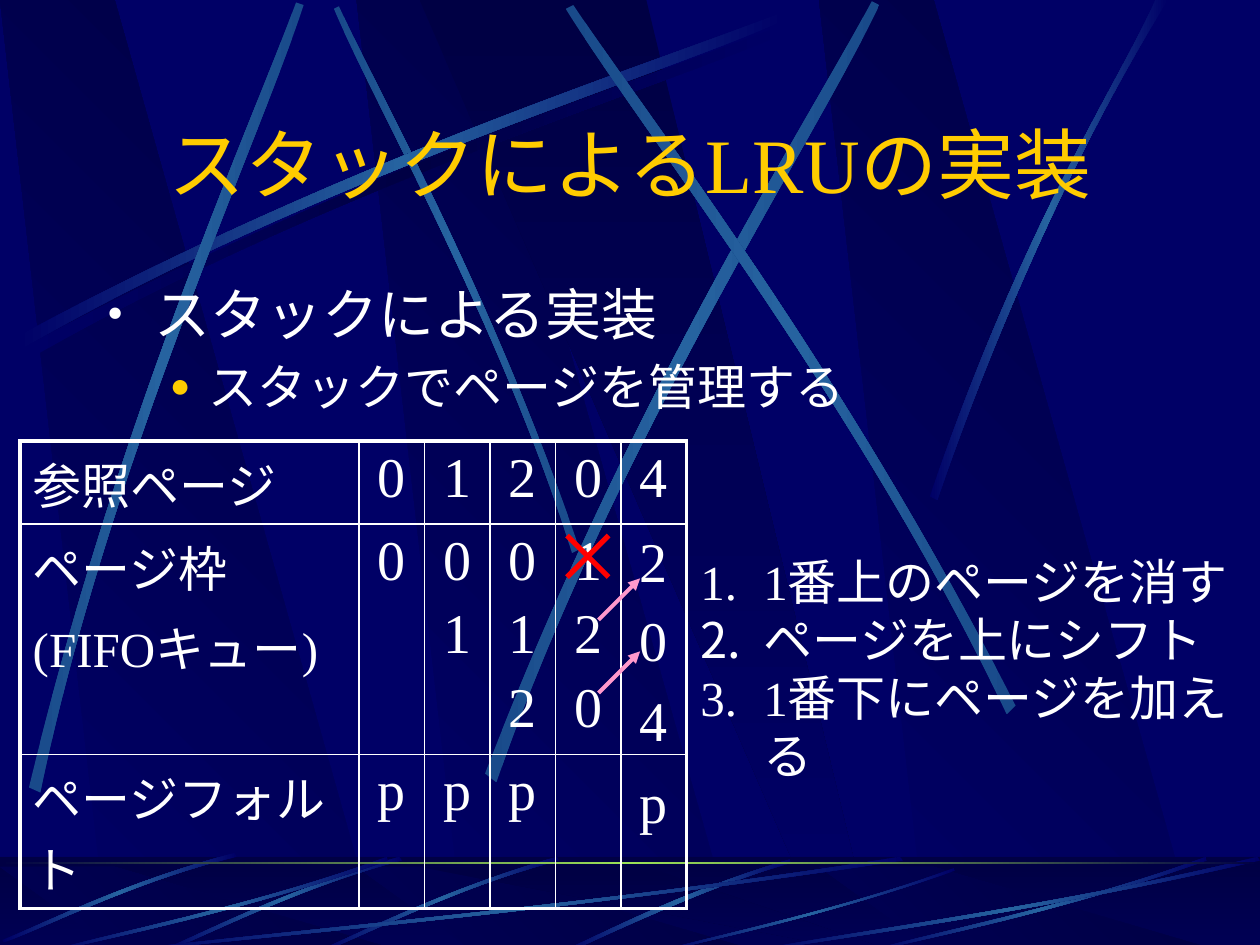
from dataclasses import dataclass
from pptx import Presentation, util as u
from pptx.dml.color import RGBColor
from pptx.enum import shapes, text
from pptx.oxml import parse_xml
from pptx.oxml.ns import nsdecls, qn
from lxml import etree

PX = 9144  # 100 px to the inch


@dataclass(frozen=True)
class Theme:
    face: str = "Times New Roman"
    back: str = "000066"
    deep: str = "000044"
    beam: str = "2663A0"
    dim: str = "194A8A"
    glow: str = "9CE157"
    gold: str = "FFCC00"
    ink: str = "FFFFFF"
    red: str = "FF0000"
    pink: str = "FF99CC"
    title: int = 44
    large: int = 32
    small: int = 28


T = Theme()
# Each beam: end tone, middle tone, one edge as a curve, the other edge as a curve back
WALL = [
    (T.back, T.deep, (20, 275, 284, 134, 524, 59, 626, 18), (629, 24, 528, 69, 254, 151, 23, 285)),
    (T.dim, T.beam, (460, 436, 391, 234, 302, 77, 269, 5), (265, 7, 295, 79, 398, 258, 454, 439)),
    (T.back, T.beam, (14, 267, 278, 125, 518, 51, 620, 10), (623, 16, 522, 61, 248, 143, 17, 277)),
    (T.dim, T.beam, (23, 625, 93, 334, 197, 105, 235, 2), (241, 4, 207, 109, 86, 368, 32, 629)),
    (T.dim, T.beam, (385, 614, 498, 320, 638, 102, 692, 1), (698, 4, 649, 108, 486, 355, 394, 621)),
    (T.dim, T.beam, (806, 560, 670, 293, 516, 95, 455, 4), (449, 7, 507, 101, 685, 325, 799, 567)),
    (T.back, T.beam, (738, 394, 814, 173, 888, 66, 917, 0), (927, 0, 836, 145, 769, 322, 744, 397)),
]
FLOOR = [(T.back, T.beam, go, back) for go, back in (
    ((627, 2, 537, 29, 477, 62, 448, 74), (453, 75, 490, 58, 571, 20, 628, 5)),
    ((442, 0, 355, 25, 287, 60, 256, 73), (257, 75, 288, 63, 365, 23, 444, 3)),
    ((317, 0, 230, 25, 162, 60, 131, 73), (132, 75, 163, 63, 240, 23, 319, 3)),
    ((186, -3, 99, 20, 33, 54, 2, 66), (3, 68, 34, 57, 110, 18, 188, 0)),
    ((717, 3, 449, 43, 206, 64, 103, 75), (100, 74, 202, 61, 480, 38, 714, 0)),
    ((308, 3, 193, 43, 88, 64, 43, 75), (42, 74, 86, 61, 206, 38, 307, 0)),
    ((758, 11, 658, 46, 567, 65, 528, 75), (527, 74, 565, 63, 669, 42, 757, 9)),
    ((958, 3, 843, 43, 738, 64, 693, 75), (692, 74, 736, 61, 856, 38, 957, 0)),
    ((1000, 3, 827, 43, 669, 64, 602, 75), (600, 74, 666, 61, 846, 38, 998, 0)),
)]


def px(*vals):
    return [u.Emu(round(v * PX)) for v in vals]


def rgb(tone):
    return RGBColor.from_string(tone)


def blend(shape, tones, ang):
    """Fill a shape with evenly spaced tones and take away its line."""
    shape.shadow.inherit = False
    shape.line.fill.background()
    shape.fill.background()
    step = 100000 // (len(tones) - 1)
    stops = "".join(f'<a:gs pos="{i * step}"><a:srgbClr val="{t}"/></a:gs>'
                    for i, t in enumerate(tones))
    grad = parse_xml(f'<a:gradFill {nsdecls("a")} rotWithShape="1"><a:gsLst>{stops}</a:gsLst>'
                     f'<a:lin ang="{ang * 60000}" scaled="1"/></a:gradFill>')
    props = shape.fill._xPr
    props.replace(props.find(qn("a:noFill")), grad)


def poly(slide, pts, tones, ang):
    pts = [px(*p) for p in pts]
    form = slide.shapes.build_freeform(*pts[0], scale=1.0)
    form.add_line_segments(pts[1:], close=True)
    shape = form.convert_to_shape()
    blend(shape, tones, ang)
    return shape


def rect(slide, box, tones, ang=0):
    shape = slide.shapes.add_shape(shapes.MSO_SHAPE.RECTANGLE, *px(*box))
    blend(shape, tones, ang)
    return shape


def bend(shape):
    """Turn the two long edges of an eight-point outline into cubic curves."""
    legs = list(shape._element.iter(qn("a:lnTo")))
    for trio in (legs[:3], legs[4:7]):
        arc = etree.Element(qn("a:cubicBezTo"))
        trio[0].addprevious(arc)
        for leg in trio:
            arc.append(leg[0])
            leg.getparent().remove(leg)


def panels(slide, box):
    x, y, _, h = box
    for left in (283, 0, 650):
        pts = [(x + left + dx, y + dy) for dx, dy in ((86, h), (302, h), (91, 0), (0, 0))]
        poly(slide, pts, (T.back, T.deep), 315)
    pts = [(x + dx, y + dy) for dx, dy in ((333, 0), (658, h), (694, h), (513, 0))]
    poly(slide, pts, (T.deep, T.back), 90)


def beams(slide, box, rows):
    for end, mid, go, back in rows:
        vals = go + back
        pts = [(box[0] + a, box[1] + b) for a, b in zip(vals[::2], vals[1::2])]
        bend(poly(slide, pts, (end, mid, end), 0))


def wall(slide, box):
    panels(slide, box)
    beams(slide, box, WALL)


def floor(slide, box):
    x, y, w, h = box
    rect(slide, box, (T.deep, T.back), 90)
    panels(slide, (x, y + 8, w, h - 8))
    veil = rect(slide, box, (T.deep, T.deep))
    for tone in veil.fill._xPr.iter(qn("a:srgbClr")):
        etree.SubElement(tone, qn("a:alpha"), val="50000")
    beams(slide, box, FLOOR)
    rect(slide, (x, y + 4, w, 2), (T.deep, T.glow, T.deep))


def bullet(par, mark, hang, left, tone=None, size=None):
    props = par._p.get_or_add_pPr()
    props.set("marL", str(left * PX))
    props.set("indent", str(-hang * PX))
    if tone:
        etree.SubElement(etree.SubElement(props, qn("a:buClr")), qn("a:srgbClr"), val=tone)
    if size:
        etree.SubElement(props, qn("a:buSzPct"), val=str(size * 1000))
    if mark == "1.":
        etree.SubElement(props, qn("a:buAutoNum"), type="arabicPeriod")
    else:
        etree.SubElement(props, qn("a:buFont"), typeface=T.face)
        etree.SubElement(props, qn("a:buChar"), char=mark)


def write(frame, lines, size=T.large, tone=T.ink, mid=False, gap=0, pitch=None, marks=()):
    """Put lines in a frame; marks holds one dict of bullet settings a line."""
    frame.word_wrap = True
    for i, line in enumerate(lines):
        par = frame.paragraphs[0] if i == 0 else frame.add_paragraph()
        par.alignment = text.PP_ALIGN.CENTER if mid else text.PP_ALIGN.LEFT
        if i and gap:
            par.space_before = u.Pt(gap)
        if pitch:
            par.line_spacing = u.Pt(pitch)
        if marks:
            bullet(par, **marks[i])
        run = par.add_run()
        run.text = line
        font = run.font
        font.name, font.size = T.face, u.Pt(size[i] if isinstance(size, tuple) else size)
        font.color.rgb = rgb(tone)


def label(slide, box, lines, **form):
    frame = slide.shapes.add_textbox(*px(*box)).text_frame
    write(frame, lines, **form)
    return frame


def edge(cell, thick):
    props = cell._tc.get_or_add_tcPr()
    for i, (side, wide) in enumerate(thick.items()):
        props.insert(i, parse_xml(
            f'<a:ln{side} {nsdecls("a")} w="{u.Pt(wide)}"><a:solidFill>'
            f'<a:srgbClr val="{T.ink}"/></a:solidFill></a:ln{side}>'))


def trace(slide, box):
    """Table of page references, frames and faults."""
    rows = [["参照ページ", "0", "1", "2", "0", "4"],
            ["ページ枠\n(FIFOキュー)", "0", "0\n1", "0\n1\n2", "1\n2\n0", ""],
            ["ページフォルト", "p", "p", "p", "", ""]]
    grid = slide.shapes.add_table(3, 6, *px(*box)).table
    grid.first_row = grid.horz_banding = False
    for j, col in enumerate(grid.columns):
        col.width = px(52 if j else box[2] - 5 * 52)[0]
    for i, (row, tall) in enumerate(zip(rows, (66, 176, 122))):
        grid.rows[i].height = px(tall)[0]
        for j, words in enumerate(row):
            cell = grid.cell(i, j)
            cell.margin_bottom = 0
            cell.fill.background()
            edge(cell, {"L": 1 if j else 2.25, "R": 2.25 if j == 5 else 1,
                        "T": 1 if i else 2.25, "B": 2.25 if i == 2 else 1})
            if words:
                write(cell.text_frame, words.split("\n"), mid=j > 0,
                      gap=6.4 if j else 5.5, size=T.large if j else T.small)


def line(slide, ends, tone, wide, tip=False):
    link = slide.shapes.add_connector(shapes.MSO_CONNECTOR.STRAIGHT, *px(*ends))
    link.line.color.rgb, link.line.width = rgb(tone), u.Pt(wide)
    if tip:
        etree.SubElement(link.line._get_or_add_ln(), qn("a:tailEnd"), type="triangle")
    etree.SubElement(link._element.spPr, qn("a:effectLst"))


def shift(slide, box):
    """Cross out the top page, move the others up and add the last one."""
    x, y, w, _ = box
    label(slide, (x + 43, y + 179, w - 43, 63), "p", mid=True)
    line(slide, (x + 33, y, x, y + 33), T.red, 3)
    line(slide, (x, y, x + 33, y + 33), T.red, 3)
    label(slide, (x + 43, y - 12, w - 43, 191), "204", mid=True, gap=6.9)
    for low in (67, 125):
        line(slide, (x + 25, y + low, x + 58, y + low - 33), T.pink, 2.25, tip=True)


def main():
    deck = Presentation()
    deck.slide_width, deck.slide_height = px(1000, 750)
    slide = deck.slides.add_slide(deck.slide_layouts[6])
    slide.background.fill.solid()
    slide.background.fill.fore_color.rgb = rgb(T.back)
    wall(slide, (0, 0, 1000, 750))
    floor(slide, (0, 680, 1000, 70))
    head = label(slide, (75, 88, 850, 83), ["スタックによるLRUの実装"],
                 size=T.title, tone=T.gold, mid=True)
    head.vertical_anchor = text.MSO_ANCHOR.MIDDLE
    label(slide, (75, 217, 850, 133), ["スタックによる実装", "スタックでページを管理する"],
          size=(T.large, T.small), gap=5.6,
          marks=(dict(mark="•", hang=38, left=38, size=85),
                 dict(mark="●", hang=31, left=81, tone=T.gold, size=70)))
    trace(slide, (16, 350, 529, 364))
    label(slide, (546, 433, 454, 150),
          ["1番上のページを消す", "ページを上にシフト", "1番下にページを加える"],
          size=T.small, pitch=33.3, marks=[dict(mark="1.", hang=50, left=50)] * 3)
    shift(slide, (450, 425, 95, 242))
    deck.save("out.pptx")


if __name__ == "__main__":
    main()
